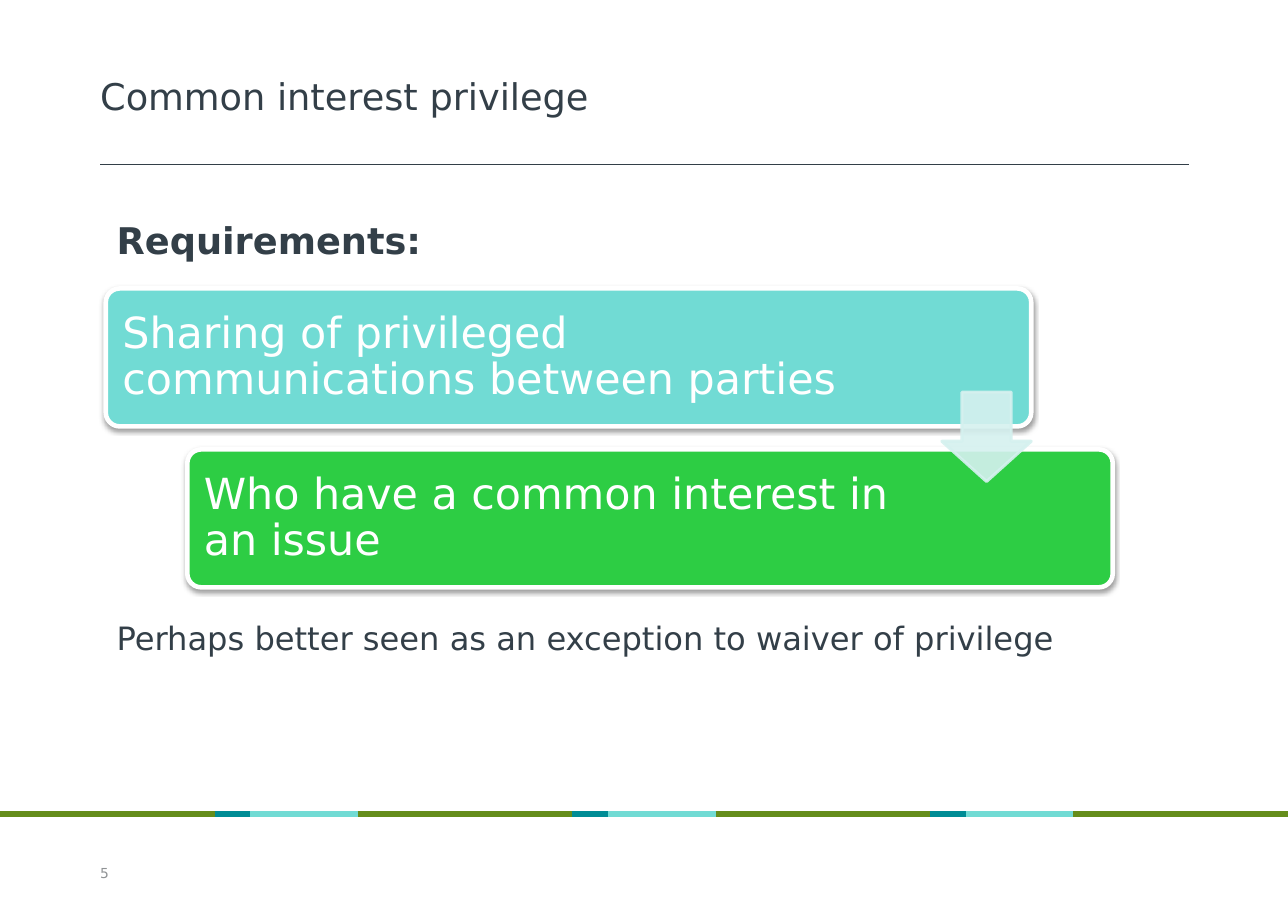
from lxml.etree import SubElement
from pptx import Presentation
from pptx.dml.color import RGBColor
from pptx.enum.shapes import MSO_CONNECTOR, MSO_SHAPE
from pptx.enum.text import MSO_ANCHOR, MSO_AUTO_SIZE, PP_ALIGN
from pptx.oxml.ns import qn
from pptx.util import Cm, Pt

FONT = "DejaVu Sans"
COLORS = {
    "text": "333F48", "number": "909395", "white": "FFFFFF", "black": "000000",
    "olive": "658D1B", "teal": "008C95", "aqua": "71DBD4",
    "green": "2DCD44", "arrow": "D5F1EF",
}


def rgb(name):
    return RGBColor.from_string(COLORS[name])


def add_line(slide, x1, x2, y, color, width):
    line = slide.shapes.add_connector(MSO_CONNECTOR.STRAIGHT, Cm(x1), Cm(y), Cm(x2), Cm(y))
    line.line.color.rgb = rgb(color)
    line.line.width = Pt(width)
    SubElement(line._element.spPr, qn("a:effectLst"))


def set_insets(tf, left, top, right, bottom):
    tf.margin_left, tf.margin_top = Cm(left), Cm(top)
    tf.margin_right, tf.margin_bottom = Cm(right), Cm(bottom)


def add_run(p, text, size, color, bold=False):
    r = p.add_run()
    r.text = text
    r.font.name, r.font.size, r.font.bold = FONT, Pt(size), bold
    r.font.color.rgb = rgb(color)


def add_text(slide, x, y, w, h, text, size, color="text", bold=False):
    tf = slide.shapes.add_textbox(Cm(x), Cm(y), Cm(w), Cm(h)).text_frame
    tf.word_wrap = True
    add_run(tf.paragraphs[0], text, size, color, bold)
    return tf


def add_shape(slide, kind, x, y, w, h, fill, line, width):
    sp = slide.shapes.add_shape(kind, Cm(x), Cm(y), Cm(w), Cm(h))
    sp.shadow.inherit = False
    sp.fill.solid()
    sp.fill.fore_color.rgb = rgb(fill)
    sp.line.color.rgb = rgb(line)
    sp.line.width = Pt(width)
    return sp


def set_alpha(parent, percent):
    for clr in parent.iter(qn("a:srgbClr")):
        SubElement(clr, qn("a:alpha"), val=str(percent * 1000))


def add_step(slide, x, y, fill, text, right_inset):
    sp = add_shape(slide, MSO_SHAPE.ROUNDED_RECTANGLE, x, y, 21.34, 3.18, fill, "white", 3)
    sp.adjustments[0] = 0.1
    # Soft shadow below the box
    effects = sp._element.spPr.find(qn("a:effectLst"))
    shadow = SubElement(effects, qn("a:outerShdw"), blurRad="40000", dist="20000",
                        dir="5400000", rotWithShape="0")
    SubElement(shadow, qn("a:srgbClr"), val=COLORS["black"])
    set_alpha(shadow, 38)
    # Label
    tf = sp.text_frame
    tf.word_wrap = True
    tf.vertical_anchor = MSO_ANCHOR.MIDDLE
    set_insets(tf, 0.29, 0.29, right_inset, 0.29)
    p = tf.paragraphs[0]
    p.alignment = PP_ALIGN.LEFT
    p.line_spacing = 0.9
    add_run(p, text, 28, "white")


def add_down_arrow(slide, x, y, size):
    sp = add_shape(slide, MSO_SHAPE.DOWN_ARROW, x, y, size, size, "arrow", "arrow", 2)
    sp.adjustments[0], sp.adjustments[1] = 0.55, 0.45
    set_alpha(sp._element.spPr, 90)
    SubElement(sp.line._get_or_add_ln(), qn("a:round"))


def add_stripe(slide, y, page_width):
    unit = page_width / 36
    pattern = [("olive", 6), ("teal", 1), ("aqua", 3)]
    x = 0
    for color, units in pattern * 3 + pattern[:1]:
        add_line(slide, x, x + units * unit, y, color, 4)
        x += units * unit


def main():
    prs = Presentation()
    prs.slide_width, prs.slide_height = Cm(29.7), Cm(21)
    slide = prs.slides.add_slide(prs.slide_layouts[6])

    # Footer stripe and title rule
    add_stripe(slide, 18.77, 29.7)
    add_line(slide, 2.31, 27.41, 3.78, "text", 0.25)

    # Title and page number
    tf = add_text(slide, 2.31, 1.7, 25.1, 1.09, "Common interest privilege", 24)
    set_insets(tf, 0, 0, 0, 0)
    tf = add_text(slide, 2.31, 19.61, 0.71, 0.71, "5", 9, "number")
    set_insets(tf, 0, 0, 0, 0)
    tf.word_wrap = False
    tf.vertical_anchor = MSO_ANCHOR.BOTTOM

    # Requirements as steps
    add_step(slide, 2.44, 6.65, "aqua",
             "Sharing of privileged communications between parties", 3.53)
    add_step(slide, 4.32, 10.36, "green", "Who have a common interest in an issue", 4.25)
    add_down_arrow(slide, 21.72, 9.04, 2.06)

    # Heading and closing remark
    tf = add_text(slide, 2.44, 4.9, 14.58, 1.27, "Requirements:", 24, bold=True)
    tf.auto_size = MSO_AUTO_SIZE.SHAPE_TO_FIT_TEXT
    tf = add_text(slide, 2.44, 14.12, 23.6, 1.14,
                  "Perhaps better seen as an exception to waiver of privilege", 21)
    tf.auto_size = MSO_AUTO_SIZE.SHAPE_TO_FIT_TEXT

    prs.save("out.pptx")


if __name__ == "__main__":
    main()
